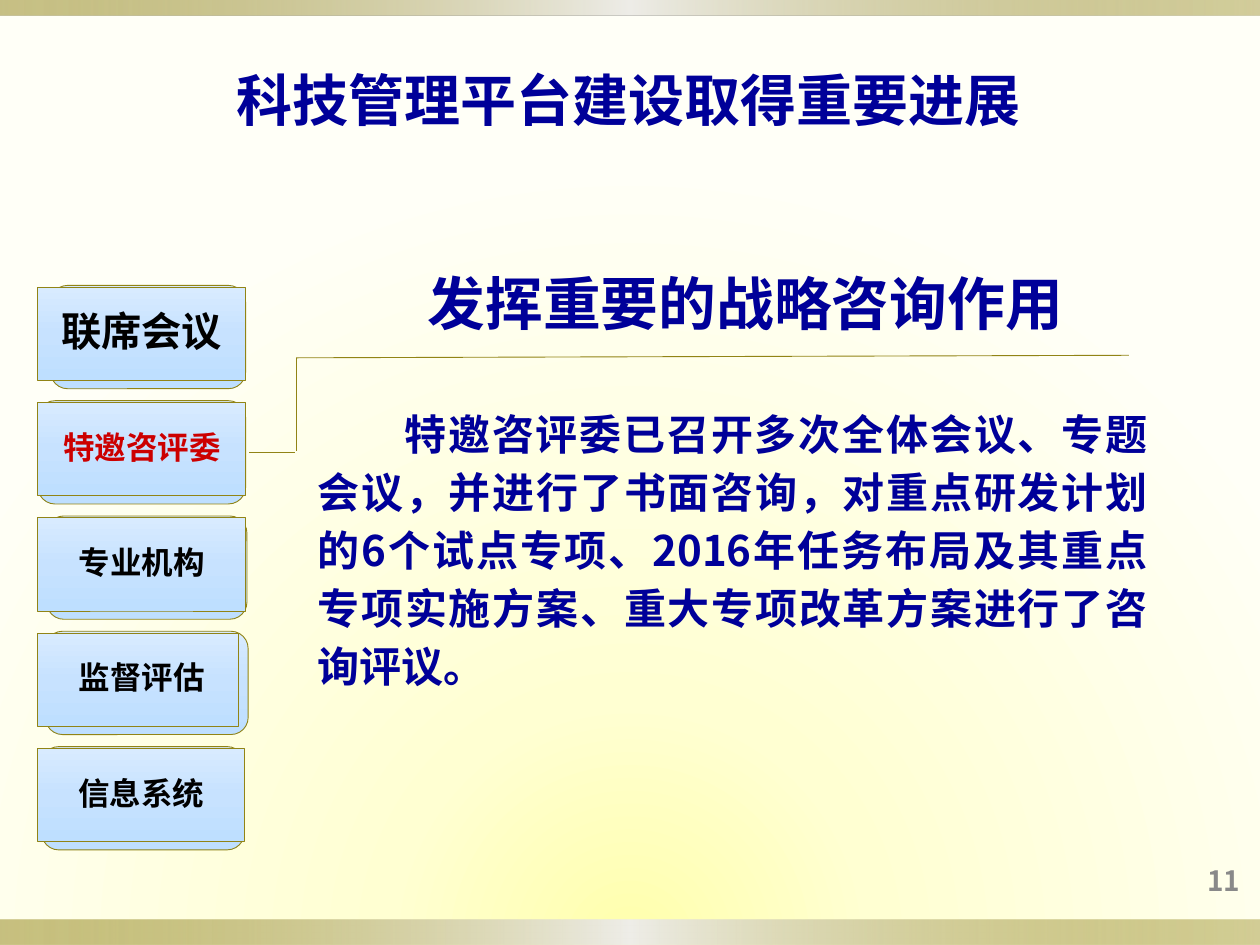
from dataclasses import dataclass

from lxml import etree
from pptx import Presentation
from pptx.dml.color import RGBColor
from pptx.enum import shapes as kinds, text as txt
from pptx.oxml.ns import qn
from pptx.util import Inches, Pt

FONT = "Noto Sans CJK SC"
NAVY, OLIVE, BLACK, RED, GRAY = "000099", "918415", "000000", "CC0000", "898989"
CARD_STOPS = [(0, "D8EBFF", 100), (50, "C7E2FF", 100), (100, "BEDFFF", 100)]
BAR_STOPS = [(0, OLIVE, 50), (50, "EEEDE8", 100), (100, OLIVE, 40)]
PAGE_STOPS = [(0, "FFFFAC", 100), (31, "FFFFD2", 100), (100, "FFFFF7", 100)]
CARD_TOP, CARD_PITCH, CARD_HEIGHT = 2.28, 0.915, 0.74
CARD_LEFT, BACK_HEIGHT, BACK_RISE = 0.3, 0.82, 0.015


@dataclass
class Card:
    label: str
    width: float
    back_left: float
    back_width: float
    size: int = 18
    color: str = BLACK


@dataclass
class Line:
    start: tuple[float, float]
    end: tuple[float, float]


CARDS = [
    Card("联席会议", 1.65, 0.4, 1.55, size=23),
    Card("特邀咨评委", 1.65, 0.3, 1.65, color=RED),
    Card("专业机构", 1.65, 0.37, 1.59),
    Card(" 监督评估", 1.59, 0.36, 1.61),
    Card("信息系统", 1.64, 0.33, 1.61),
]
LINES = [
    Line((2.35, 2.84), (8.96, 2.82)),
    Line((2.35, 2.84), (2.35, 3.58)),
    Line((2.34, 3.59), (1.98, 3.59)),
]


def rgb(value: str) -> RGBColor:
    return RGBColor.from_string(value)


def set_gradient(fill, holder, stops, angle=None) -> None:
    """Fill with stops of (position, colour, opacity); no angle means a circle."""
    fill.gradient()
    gradient = holder.find(qn("a:gradFill"))
    for child in list(gradient):
        gradient.remove(child)
    stop_list = etree.SubElement(gradient, qn("a:gsLst"))
    for position, color, opacity in stops:
        stop = etree.SubElement(stop_list, qn("a:gs"), pos=str(position * 1000))
        shade = etree.SubElement(stop, qn("a:srgbClr"), val=color)
        if opacity < 100:
            etree.SubElement(shade, qn("a:alpha"), val=str(opacity * 1000))
    if angle is None:
        circle = etree.SubElement(gradient, qn("a:path"), path="circle")
        etree.SubElement(circle, qn("a:fillToRect"),
                         l="50000", t="150000", r="50000", b="-50000")
    else:
        etree.SubElement(gradient, qn("a:lin"), ang=str(angle * 60000), scaled="0")


def add_box(page, kind, place, stops, angle, outlined=True):
    box = page.shapes.add_shape(kind, *map(Inches, place))
    box.shadow.inherit = False
    set_gradient(box.fill, box._element.spPr, stops, angle)
    if outlined:
        box.line.color.rgb = rgb(OLIVE)
        box.line.width = Pt(0.5)
    else:
        box.line.fill.background()
    return box


def write(box, wording, size, color, align, inset=(0.1, 0.05), font=FONT, **para_format):
    """Put one bold paragraph in the box and return it."""
    frame = box.text_frame
    side, edge = map(Inches, inset)
    frame_format = {
        "word_wrap": True, "auto_size": txt.MSO_AUTO_SIZE.NONE,
        "vertical_anchor": txt.MSO_ANCHOR.MIDDLE,
        "margin_left": side, "margin_right": side,
        "margin_top": edge, "margin_bottom": edge,
    }
    for name, value in frame_format.items():
        setattr(frame, name, value)
    para = frame.paragraphs[0]
    for name, value in {"alignment": align, "space_before": Pt(0), **para_format}.items():
        setattr(para, name, value)
    span = para.add_run()
    span.text = wording
    for name, value in {"size": Pt(size), "bold": True, "name": font}.items():
        setattr(span.font, name, value)
    span.font.color.rgb = rgb(color)
    etree.SubElement(span._r.get_or_add_rPr(), qn("a:ea"), typeface=FONT)
    return para


def place_at(box, left, top, width, height) -> None:
    box.left, box.top, box.width, box.height = map(Inches, (left, top, width, height))


def add_text(page, place, *content, **formats):
    box = page.shapes.add_textbox(*map(Inches, place))
    write(box, *content, **formats)
    return box


def draw_card(page, card: Card, top: float) -> None:
    add_box(page, kinds.MSO_SHAPE.ROUNDED_RECTANGLE,
            (card.back_left, top - BACK_RISE, card.back_width, BACK_HEIGHT), CARD_STOPS, 90)
    front = add_box(page, kinds.MSO_SHAPE.RECTANGLE,
                    (CARD_LEFT, top, card.width, CARD_HEIGHT), CARD_STOPS, 90)
    write(front, card.label, card.size, card.color, txt.PP_ALIGN.CENTER,
          inset=(0.11, 0.11), line_spacing=0.9)


def draw_line(page, line: Line) -> None:
    connector = page.shapes.add_connector(
        kinds.MSO_CONNECTOR.STRAIGHT, *map(Inches, line.start + line.end))
    connector.line.color.rgb = rgb(OLIVE)
    connector.line.width = Pt(0.5)
    etree.SubElement(connector._element.spPr, qn("a:effectLst"))


def main() -> None:
    deck = Presentation()
    deck.slide_width, deck.slide_height = Inches(10), Inches(7.5)
    page = deck.slides.add_slide(deck.slide_layouts[1])
    page_fill = page.background.fill
    page_fill.solid()
    set_gradient(page_fill, page._element.find(".//" + qn("p:bgPr")), PAGE_STOPS)

    for top, height in ((7.3, 0.2), (0, 0.12)):
        add_box(page, kinds.MSO_SHAPE.RECTANGLE, (0, top, 10, height),
                BAR_STOPS, 0, outlined=False)

    title, body = page.shapes.title, page.placeholders[1]
    place_at(title, 0.04, 0.21, 9.9, 1.15)
    write(title, "科技管理平台建设取得重要进展", 32, NAVY, txt.PP_ALIGN.CENTER, font="Arial")

    place_at(body, 2.24, 2.49, 7.15, 3.69)
    para = write(
        body,
        "特邀咨评委已召开多次全体会议、专题会议，并进行了书面咨询，对重点研发计划的6个试点专项、"
        "2016年任务布局及其重点专项实施方案、重大专项改革方案进行了咨询评议。",
        24, NAVY, txt.PP_ALIGN.JUSTIFY, inset=(0.28, 0.23), line_spacing=1.15)
    properties = para._p.get_or_add_pPr()
    properties.set("marL", "0")
    properties.set("indent", str(Inches(0.69)))
    etree.SubElement(properties, qn("a:buNone"))

    heading = add_text(page, (2.36, 2.18, 7.11, 0.55), "发挥重要的战略咨询作用",
                       33, NAVY, txt.PP_ALIGN.CENTER, line_spacing=Pt(32.2))
    heading.text_frame.vertical_anchor = txt.MSO_ANCHOR.TOP
    add_text(page, (7.61, 6.8, 2.33, 0.37), "11", 16, GRAY, txt.PP_ALIGN.RIGHT)

    for row, card in enumerate(CARDS):
        draw_card(page, card, CARD_TOP + row * CARD_PITCH)
    for line in LINES:
        draw_line(page, line)
    deck.save("out.pptx")


if __name__ == "__main__":
    main()
